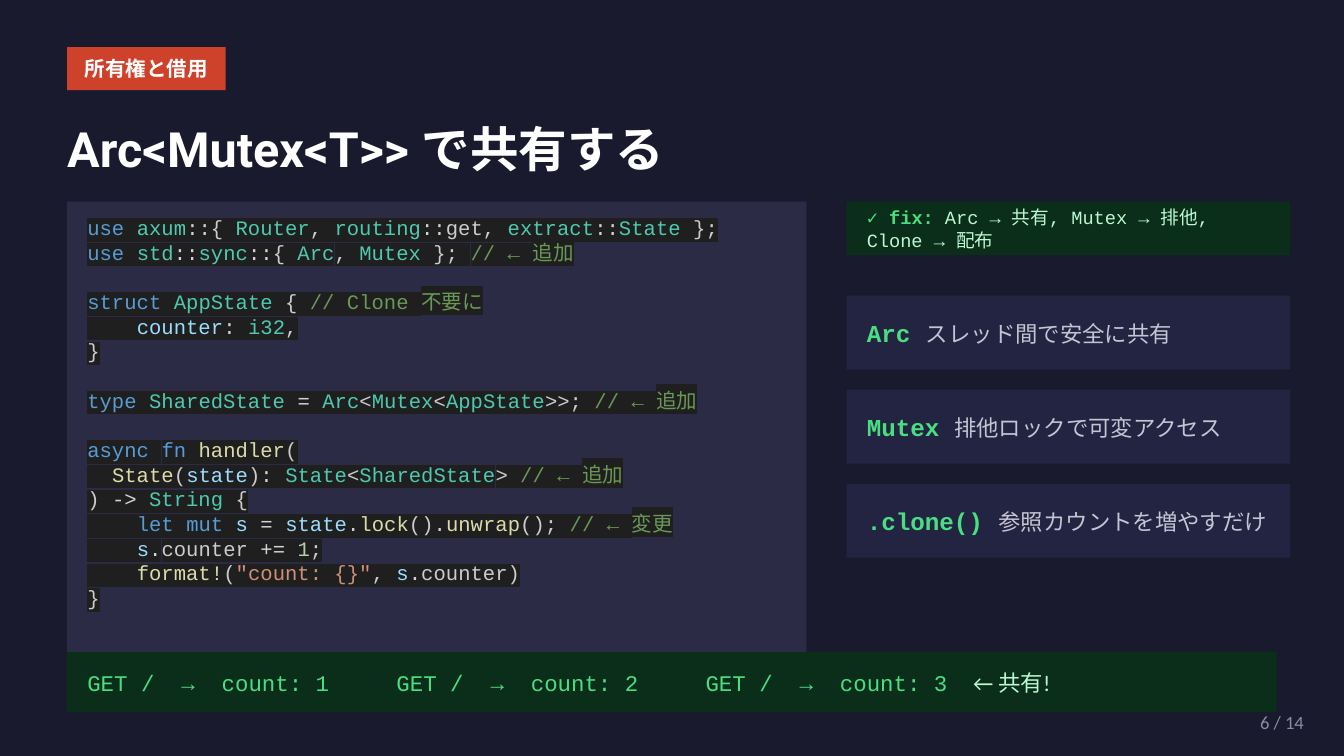
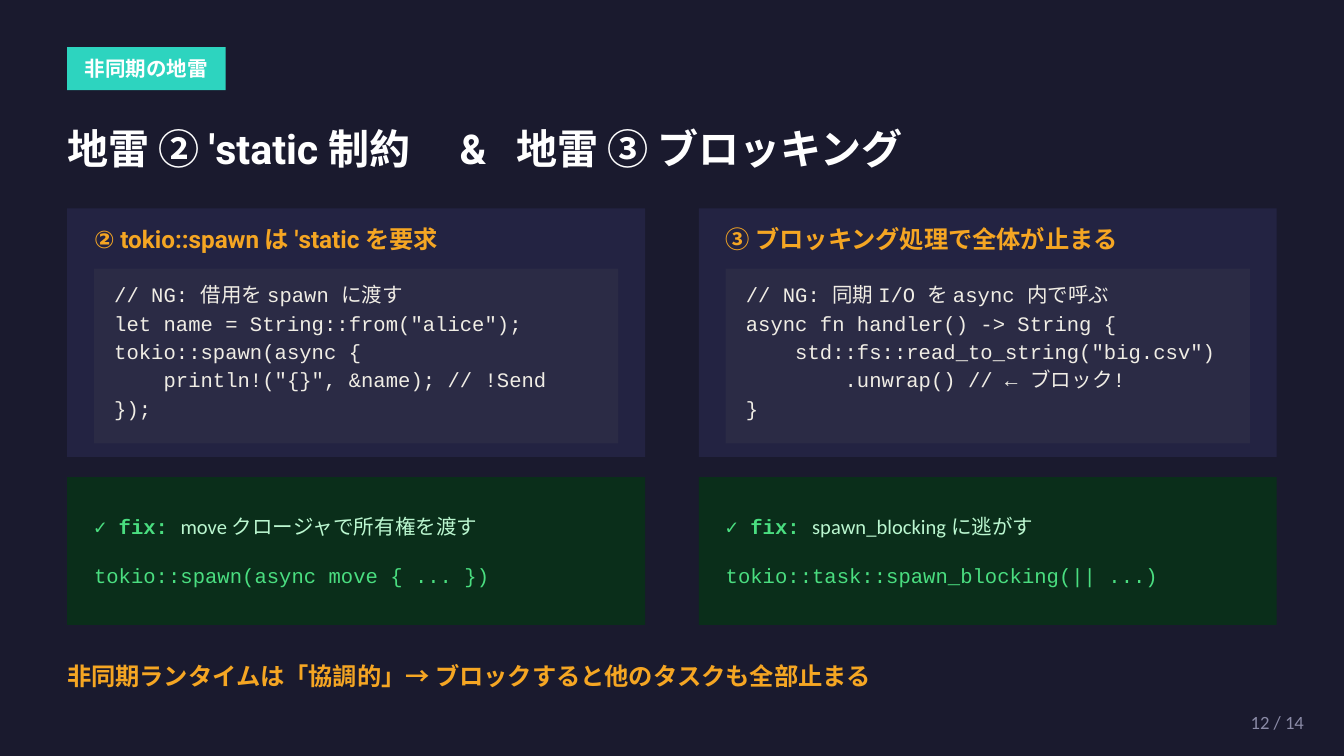
from lxml.etree import SubElement
from pptx import Presentation
from pptx.dml.color import RGBColor
from pptx.enum.shapes import MSO_SHAPE as Shape
from pptx.enum.text import MSO_ANCHOR as Anchor, PP_ALIGN as Align
from pptx.oxml.ns import qn
from pptx.util import Pt

PX = 9144
NIGHT, PANEL, CODE_PANEL, FOREST = "1A1A2E", "232342", "2B2B45", "0A2E1A"
WHITE, GREY, SOFT, CREAM = "FFFFFF", "8B8BA7", "C4C4D4", "F0EDE5"
GREEN, MINT, AMBER = "4ADE80", "BBF7D0", "F5A623"
KEY, TYPE, VAR, FUNC = "569CD6", "4EC9B0", "9CDCFE", "DCDCAA"
PLAIN, OP, NOTE, NUM, STR = "CCCCCC", "D4D4D4", "6A9955", "B5CEA8", "CE9178"
HIGHLIGHT = "1F1F1F"
BODY, HEAD, MONO = "Calibri", "Roboto", "Courier New"
GAP = 13.2


def panel(slide, x, y, w, h, fill):
    rect = slide.shapes.add_shape(Shape.RECTANGLE, x * PX, y * PX, w * PX, h * PX)
    rect.shadow.inherit = False
    rect.fill.solid()
    rect.fill.fore_color.rgb = RGBColor.from_string(fill)
    rect.line.fill.background()


def write(slide, x, y, w, h, lines, size, font, bold=False, anchor=Anchor.MIDDLE,
          align=Align.LEFT, inset=(0, 0), tabs=(), after=None, highlight=None):
    frame = slide.shapes.add_textbox(x * PX, y * PX, w * PX, h * PX).text_frame
    frame.word_wrap = True
    frame.vertical_anchor = anchor
    frame.margin_left = frame.margin_right = inset[0] * PX
    frame.margin_top = frame.margin_bottom = inset[1] * PX
    paragraph, gap = None, False
    for line in lines:
        if not line:
            gap = True
            continue
        paragraph = frame.add_paragraph() if paragraph else frame.paragraphs[0]
        if tabs:
            stops = SubElement(paragraph._p.get_or_add_pPr(), qn("a:tabLst"))
            for stop in tabs:
                SubElement(stops, qn("a:tab"), pos=str(stop * PX), algn="l")
        paragraph.alignment = align
        if gap:
            paragraph.space_before = Pt(GAP)
        if after:
            paragraph.space_after = Pt(after)
        gap = False
        for color, text, *style in line:
            run = paragraph.add_run()
            run.text = text
            run_font, run_size, run_bold = style or (font, size, bold)
            run.font.size = Pt(run_size)
            run.font.bold = run_bold
            run.font.color.rgb = RGBColor.from_string(color)
            if highlight:
                mark = SubElement(run._r.get_or_add_rPr(), qn("a:highlight"))
                SubElement(mark, qn("a:srgbClr"), val=highlight)
            run.font.name = run_font


prs = Presentation()
prs.slide_width = 1000 * PX
prs.slide_height = prs.slide_width * 9 // 16

pages = [
    ("6 / 14", "所有権と借用", "CE422B", "Arc<Mutex<T>> で共有する", 26, ()),
    ("12 / 14", "非同期の地雷", "2DD4BF",
     "地雷 ② 'static 制約\t&\t地雷 ③ ブロッキング", 22, (292, 334)),
]
slides = []
for number, chapter, accent, title, title_size, title_tabs in pages:
    slide = prs.slides.add_slide(prs.slide_layouts[6])
    slide.background.fill.solid()
    slide.background.fill.fore_color.rgb = RGBColor.from_string(NIGHT)
    write(slide, 880, 520, 100, 35, [[(GREY, number)]], 10, BODY,
          align=Align.RIGHT, inset=(10, 5))
    panel(slide, 50, 35, 118, 32, accent)
    write(slide, 50, 35, 118, 32, [[(WHITE, chapter)]], 11, BODY, True,
          align=Align.CENTER)
    write(slide, 50, 80, 900, 60, [[(WHITE, title)]], title_size, HEAD, True,
          tabs=title_tabs)
    slides.append(slide)
sharing, pitfalls = slides

panel(sharing, 50, 150, 550, 350, CODE_PANEL)
panel(sharing, 630, 150, 330, 40, FOREST)
write(sharing, 645, 150, 300, 40,
      [[(GREEN, "✓ fix: ", MONO, 10, True),
        (MINT, "Arc → 共有, Mutex → 排他, Clone → 配布")]], 10, MONO)

roles = [
    ("Arc", "スレッド間で安全に共有", 44),
    ("Mutex", "排他ロックで可変アクセス", 65),
    (".clone()", "参照カウントを増やすだけ", 98),
]
for row, (term, meaning, stop) in enumerate(roles):
    top = 220 + 70 * row
    panel(sharing, 630, top, 330, 55, PANEL)
    write(sharing, 645, top, 300, 55,
          [[(GREEN, term, MONO, 13, True), (SOFT, "\t" + meaning)]],
          12, BODY, tabs=[stop])

panel(sharing, 50, 485, 900, 45, FOREST)
requests = "\t".join(f"GET /\t→\tcount: {count}" for count in (1, 2, 3))
request_tabs = [230 * i + step for i in range(3) for step in (70, 100, 230)]
request_tabs[-1] = 659
write(sharing, 65, 485, 870, 45,
      [[(GREEN, requests), (MINT, "\t← 共有!", BODY, 12, False)]],
      12, MONO, tabs=request_tabs)

handler_code = [
    [(KEY, "use"), (PLAIN, " "), (TYPE, "axum"), (OP, "::"), (PLAIN, "{ "),
     (TYPE, "Router"), (PLAIN, ", "), (TYPE, "routing"), (OP, "::"),
     (PLAIN, "get, "), (TYPE, "extract"), (OP, "::"), (TYPE, "State"),
     (PLAIN, " };")],
    [(KEY, "use"), (PLAIN, " "), (TYPE, "std"), (OP, "::"), (TYPE, "sync"),
     (OP, "::"), (PLAIN, "{ "), (TYPE, "Arc"), (PLAIN, ", "), (TYPE, "Mutex"),
     (PLAIN, " }; "), (NOTE, "// ← 追加")],
    [],
    [(KEY, "struct"), (PLAIN, " "), (TYPE, "AppState"), (PLAIN, " { "),
     (NOTE, "// Clone 不要に")],
    [(PLAIN, "    "), (VAR, "counter"), (OP, ":"), (PLAIN, " "), (TYPE, "i32"),
     (PLAIN, ",")],
    [(PLAIN, "}")],
    [],
    [(KEY, "type"), (PLAIN, " "), (TYPE, "SharedState"), (PLAIN, " "), (OP, "="),
     (PLAIN, " "), (TYPE, "Arc"), (PLAIN, "<"), (TYPE, "Mutex"), (PLAIN, "<"),
     (TYPE, "AppState"), (PLAIN, ">>; "), (NOTE, "// ← 追加")],
    [],
    [(KEY, "async"), (PLAIN, " "), (KEY, "fn"), (PLAIN, " "), (FUNC, "handler"),
     (PLAIN, "(")],
    [(PLAIN, "  "), (FUNC, "State"), (PLAIN, "("), (VAR, "state"), (PLAIN, ")"),
     (OP, ":"), (PLAIN, " "), (TYPE, "State"), (PLAIN, "<"),
     (TYPE, "SharedState"), (PLAIN, "> "), (NOTE, "// ← 追加")],
    [(PLAIN, ") "), (OP, "->"), (PLAIN, " "), (TYPE, "String"), (PLAIN, " {")],
    [(PLAIN, "    "), (KEY, "let"), (PLAIN, " "), (KEY, "mut"), (PLAIN, " "),
     (VAR, "s"), (PLAIN, " "), (OP, "="), (PLAIN, " "), (VAR, "state"), (OP, "."),
     (FUNC, "lock"), (PLAIN, "()"), (OP, "."), (FUNC, "unwrap"), (PLAIN, "(); "),
     (NOTE, "// ← 変更")],
    [(PLAIN, "    "), (VAR, "s"), (OP, "."), (PLAIN, "counter "), (OP, "+="),
     (PLAIN, " "), (NUM, "1"), (PLAIN, ";")],
    [(PLAIN, "    "), (FUNC, "format!"), (PLAIN, "("), (STR, '"count: {}"'),
     (PLAIN, ", "), (VAR, "s"), (OP, "."), (PLAIN, "counter)")],
    [(PLAIN, "}")],
]
write(sharing, 65, 160, 520, 306, handler_code, 11, MONO, anchor=Anchor.TOP,
      highlight=HIGHLIGHT)

mines = [
    ("② tokio::spawn は 'static を要求",
     ["// NG: 借用を spawn に渡す",
      'let name = String::from("alice");',
      "tokio::spawn(async {",
      '    println!("{}", &name); // !Send',
      "});"],
     "move クロージャで所有権を渡す", "tokio::spawn(async move { ... })"),
    ("③ ブロッキング処理で全体が止まる",
     ["// NG: 同期 I/O を async 内で呼ぶ",
      "async fn handler() -> String {",
      '    std::fs::read_to_string("big.csv")',
      "        .unwrap() // ← ブロック!",
      "}"],
     "spawn_blocking に逃がす", "tokio::task::spawn_blocking(|| ...)"),
]
for column, (heading, bad_code, remedy, good_code) in enumerate(mines):
    left = 50 + 470 * column
    panel(pitfalls, left, 155, 430, 185, PANEL)
    write(pitfalls, left + 20, 160, 390, 35, [[(AMBER, heading)]], 13, HEAD, True)
    panel(pitfalls, left + 20, 200, 390, 130, CODE_PANEL)
    write(pitfalls, left + 35, 210, 360, 110, [[(CREAM, line)] for line in bad_code],
          11, MONO, anchor=Anchor.TOP, after=2)
    panel(pitfalls, left, 355, 430, 110, FOREST)
    write(pitfalls, left + 20, 360, 390, 100,
          [[(GREEN, "✓ fix: ", MONO, 11, True), (MINT, remedy, BODY, 11, False)],
           [],
           [(GREEN, good_code)]], 11, MONO)

write(pitfalls, 50, 485, 900, 35,
      [[(AMBER, "非同期ランタイムは「協調的」→ ブロックすると他のタスクも全部止まる")]],
      13, BODY, True)

prs.save("out.pptx")
